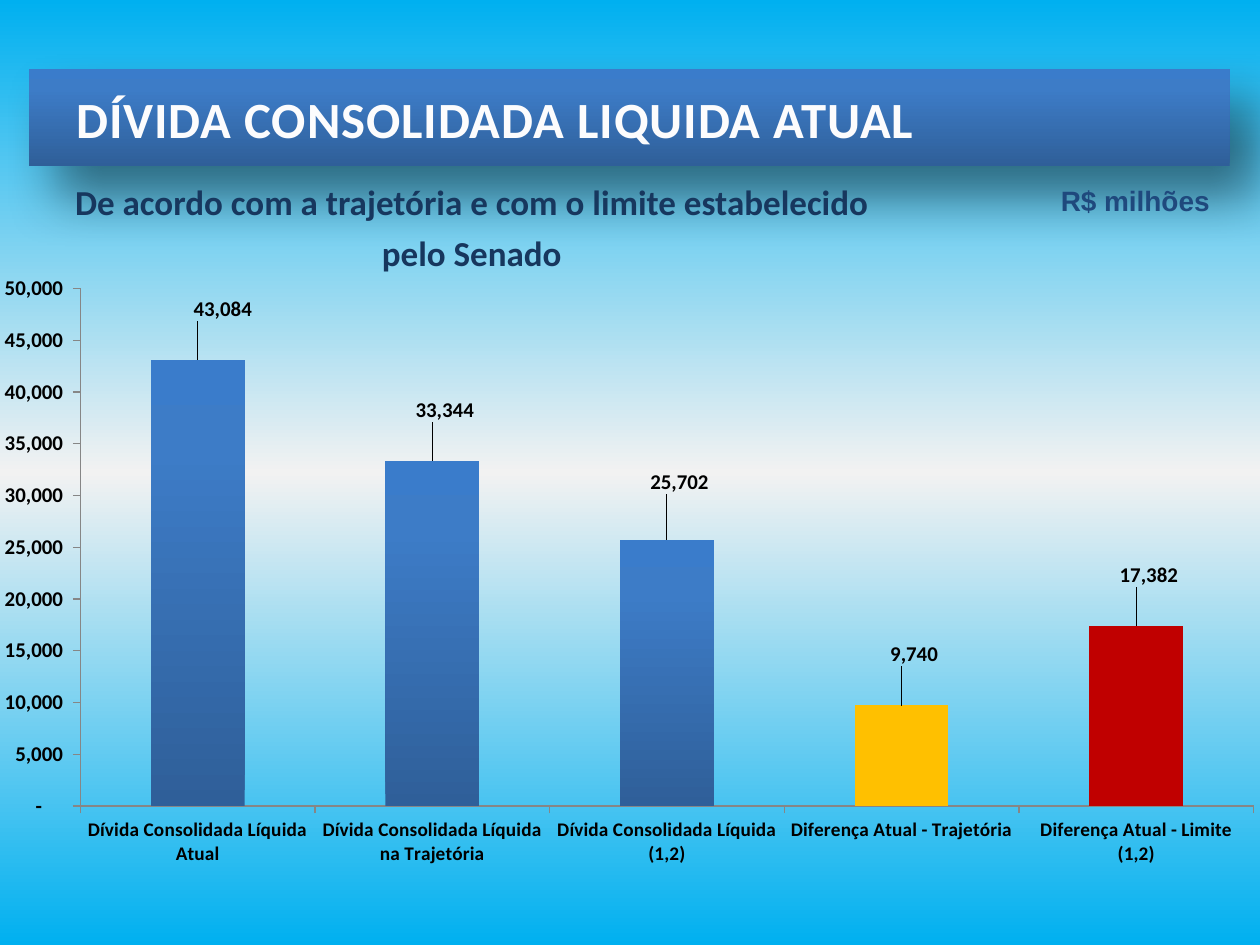
"""Build a slide charting the current net consolidated debt against its limits."""
import pptx
import pptx.chart.data
import pptx.dml.color
import pptx.enum.chart
import pptx.enum.shapes
import pptx.enum.text
import pptx.oxml
import pptx.oxml.ns
import pptx.util

Inches = pptx.util.Inches
Pt = pptx.util.Pt
RGBColor = pptx.dml.color.RGBColor
qn = pptx.oxml.ns.qn
PP_ALIGN = pptx.enum.text.PP_ALIGN
MSO_SHAPE = pptx.enum.shapes.MSO_SHAPE

SKY = RGBColor(0x00, 0xB0, 0xF0)
PALE = RGBColor(0xF2, 0xF2, 0xF2)
DEEP_BLUE = RGBColor(0x2F, 0x5F, 0x99)
MID_BLUE = RGBColor(0x3D, 0x7C, 0xC7)
BRIGHT_BLUE = RGBColor(0x3A, 0x7C, 0xCB)
TITLE_WHITE = RGBColor(0xFC, 0xFC, 0xFD)
NAVY = RGBColor(0x17, 0x37, 0x5E)
UNIT_BLUE = RGBColor(0x1F, 0x49, 0x7D)
BLACK = RGBColor(0, 0, 0)
AXIS_GRAY = RGBColor(0x86, 0x86, 0x86)
AMBER = RGBColor(0xFF, 0xC0, 0x00)
RED = RGBColor(0xC0, 0x00, 0x00)

BLUE_STOPS = [(0, DEEP_BLUE), (80, MID_BLUE), (100, BRIGHT_BLUE)]
NUMBER_FORMAT = '_(* #,##0_);_(* \\(#,##0\\);_(* "-"??_);_('
SHADOW = (
    f'<a:effectLst {pptx.oxml.ns.nsdecls("a")}>'
    '<a:outerShdw blurRad="{blur}" dist="{dist}" dir="{angle}" algn="tl" rotWithShape="0">'
    '<a:srgbClr val="000000"><a:alpha val="{alpha}"/></a:srgbClr>'
    '</a:outerShdw></a:effectLst>'
)


def paint_gradient(fill, element, stops):
    fill.gradient()
    fill.gradient_angle = 90
    stop_list = next(element.iter(qn("a:gsLst")))
    for stop in list(stop_list):
        stop_list.remove(stop)
    for position, color in stops:
        stop_list.append(pptx.oxml.parse_xml(
            f'<a:gs {pptx.oxml.ns.nsdecls("a")} pos="{position * 1000}">'
            f'<a:srgbClr val="{color}"/></a:gs>'))


def write_text(shape, text, size, color, font="Calibri", align=PP_ALIGN.LEFT,
               anchor=pptx.enum.text.MSO_ANCHOR.TOP, line_spacing=None):
    frame = shape.text_frame
    frame.word_wrap = True
    frame.vertical_anchor = anchor
    paragraph = frame.paragraphs[0]
    paragraph.alignment = align
    paragraph.line_spacing = line_spacing
    run = paragraph.add_run()
    run.text = text
    run.font.name = font
    run.font.size = Pt(size)
    run.font.bold = True
    run.font.color.rgb = color
    return run


deck = pptx.Presentation()
deck.slide_width = Inches(10)
deck.slide_height = Inches(7.5)
slide = deck.slides.add_slide(deck.slide_layouts[6])
background = slide.background
paint_gradient(background.fill, slide.element, [(0, SKY), (50, PALE), (100, SKY)])

banner = slide.shapes.add_shape(
    MSO_SHAPE.RECTANGLE, Inches(0.23), Inches(0.55), Inches(9.53), Inches(0.77))
paint_gradient(banner.fill, banner.element, BLUE_STOPS)
banner.line.fill.background()
banner.element.spPr.append(pptx.oxml.parse_xml(SHADOW.format(
    blur=Pt(30), dist=Pt(23.4), angle=50 * 60000, alpha=45000)))

title = slide.shapes.add_shape(
    MSO_SHAPE.FLOWCHART_ALTERNATE_PROCESS,
    Inches(0.47), Inches(0.55), Inches(9.3), Inches(0.78))
title.shadow.inherit = False
title.fill.background()
title.line.fill.background()
title_run = write_text(title, "DÍVIDA CONSOLIDADA LIQUIDA ATUAL", size=29, color=TITLE_WHITE,
                       anchor=pptx.enum.text.MSO_ANCHOR.MIDDLE)
title_format = title_run.font._element
title_format.set("spc", "50")
title_format.find(qn("a:solidFill")).addnext(pptx.oxml.parse_xml(SHADOW.format(
    blur=Pt(3), dist=Pt(2), angle=45 * 60000, alpha=50000)))

subtitle = slide.shapes.add_textbox(Inches(0.23), Inches(1.32), Inches(7.03), Inches(0.91))
write_text(subtitle, "De acordo com a trajetória e com o limite estabelecido pelo Senado",
           size=20, color=NAVY, align=PP_ALIGN.CENTER, line_spacing=1.2)
unit = slide.shapes.add_textbox(Inches(7.97), Inches(1.41), Inches(1.73), Inches(0.37))
write_text(unit, "R$ milhões", size=16, color=UNIT_BLUE, font="Arial", align=PP_ALIGN.RIGHT)

debt_data = pptx.chart.data.CategoryChartData(number_format=NUMBER_FORMAT)
debt_data.categories = [
    "Dívida Consolidada Líquida Atual",
    "Dívida Consolidada Líquida na Trajetória",
    "Dívida Consolidada Líquida (1,2)",
    "Diferença Atual - Trajetória",
    "Diferença Atual - Limite (1,2)",
]
debt_data.add_series("Series 1", [43084, 33344, 25702, 9740, 17382])
debt_chart = slide.shapes.add_chart(
    pptx.enum.chart.XL_CHART_TYPE.COLUMN_CLUSTERED,
    Inches(0), Inches(2.19), Inches(10.05), Inches(5.31), debt_data).chart
debt_chart.has_legend = False
debt_chart.has_title = False
debt_chart.font.name = "Calibri"
debt_chart.font.size = Pt(12)
debt_chart.font.bold = True
debt_chart.font.color.rgb = BLACK

plot_area = next(debt_chart.element.iter(qn("c:plotArea")))
for old_layout in plot_area.findall(qn("c:layout")):
    plot_area.remove(old_layout)
plot_area.insert(0, pptx.oxml.parse_xml(
    f'<c:layout {pptx.oxml.ns.nsdecls("c")}><c:manualLayout><c:layoutTarget val="inner"/>'
    '<c:xMode val="edge"/><c:yMode val="edge"/><c:x val="0.06"/><c:y val="0.017"/>'
    '<c:w val="0.93"/><c:h val="0.775"/></c:manualLayout></c:layout>'))

for axis in (debt_chart.category_axis, debt_chart.value_axis):
    axis.has_major_gridlines = False
    axis.major_tick_mark = pptx.enum.chart.XL_TICK_MARK.OUTSIDE
    axis.format.line.color.rgb = AXIS_GRAY
debt_chart.category_axis.tick_label_position = pptx.enum.chart.XL_TICK_LABEL_POSITION.LOW
debt_chart.category_axis.tick_labels.font.size = Pt(11)
debt_chart.value_axis.minimum_scale = 0
debt_chart.value_axis.maximum_scale = 50000
debt_chart.value_axis.major_unit = 5000
debt_chart.value_axis.tick_labels.number_format = NUMBER_FORMAT
debt_chart.value_axis.tick_labels.number_format_is_linked = False

columns = debt_chart.plots[0]
columns.vary_by_categories = False
columns.gap_width = 150
debt = columns.series[0]
debt.invert_if_negative = False
paint_gradient(debt.format.fill, debt._element, BLUE_STOPS)
for index, color in {3: AMBER, 4: RED}.items():
    difference = debt.points[index].format.fill
    difference.solid()
    difference.fore_color.rgb = color

debt.data_labels.show_value = True
debt.data_labels.number_format = NUMBER_FORMAT
debt.data_labels.number_format_is_linked = False
label_shifts = [(0.02, -0.05), (0.01, -0.05), (0.01, -0.06), (0.01, -0.05), (0.01, -0.05)]
for index in range(len(label_shifts)):
    debt.points[index].data_label.position = pptx.enum.chart.XL_LABEL_POSITION.OUTSIDE_END
for label, (shift_x, shift_y) in zip(debt._element.iter(qn("c:dLbl")), label_shifts):
    label.insert(1, pptx.oxml.parse_xml(
        f'<c:layout {pptx.oxml.ns.nsdecls("c")}><c:manualLayout>'
        f'<c:x val="{shift_x}"/><c:y val="{shift_y}"/></c:manualLayout></c:layout>'))

deck.save("out.pptx")
